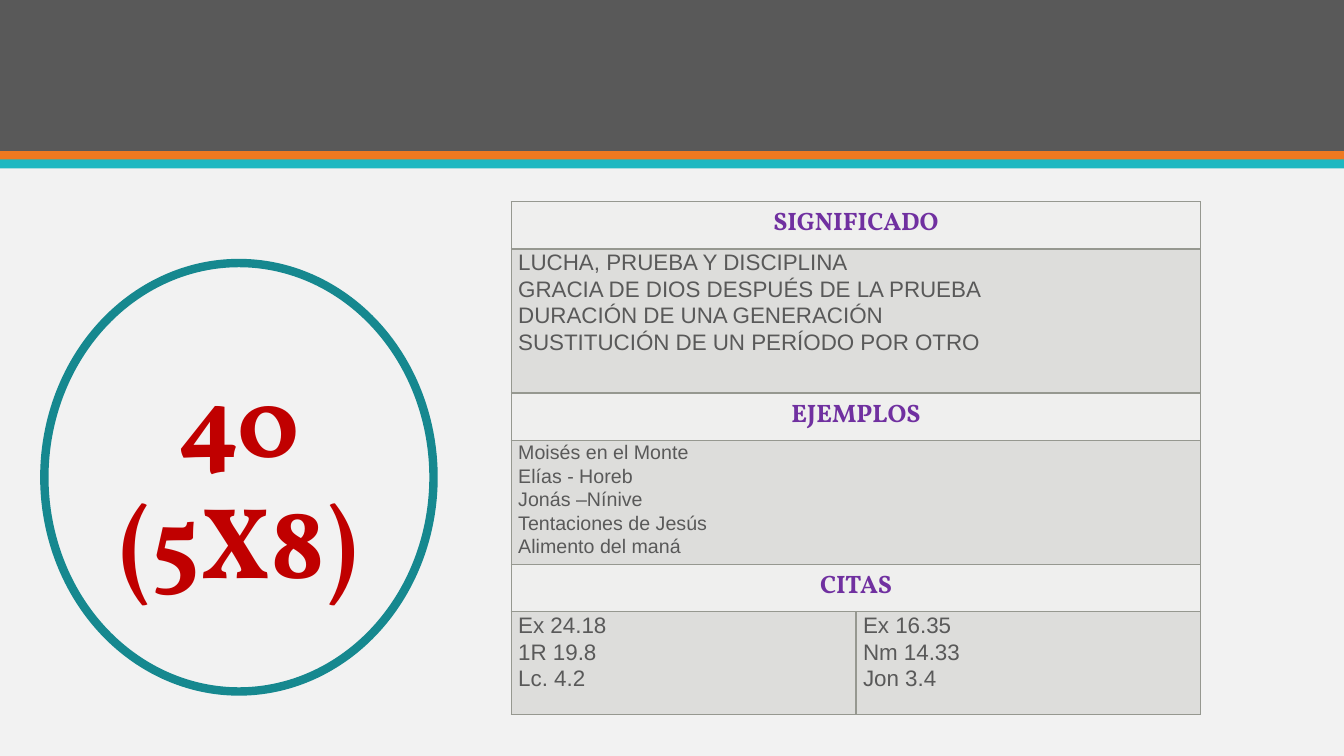
from lxml import etree
from pptx import Presentation
from pptx.dml.color import RGBColor
from pptx.enum.shapes import MSO_SHAPE as Preset
from pptx.enum.text import MSO_ANCHOR as Anchor, PP_ALIGN as Align
from pptx.oxml.ns import qn
from pptx.util import Inches, Pt

BACKGROUND = RGBColor(0xF2, 0xF2, 0xF2)
GRAY = RGBColor(0x59, 0x59, 0x59)
ORANGE = RGBColor(0xEF, 0x79, 0x20)
TURQUOISE = RGBColor(0x1E, 0xB8, 0xC1)
TEAL = RGBColor(0x16, 0x88, 0x8F)
RED = RGBColor(0xC0, 0x00, 0x00)
PURPLE = RGBColor(0x70, 0x30, 0xA0)
HEADING_FILL = RGBColor(0xEF, 0xEF, 0xEE)
BODY_FILL = RGBColor(0xDD, 0xDD, 0xDB)
BORDER = RGBColor(0x96, 0x98, 0x90)

SLIDE_WIDTH, SLIDE_HEIGHT = 13.33, 7.5
HEADING_HEIGHT = 0.47

SECTIONS = [
    ("SIGNIFICADO", 1.43, 16, [[
        "LUCHA, PRUEBA Y DISCIPLINA",
        "GRACIA DE DIOS DESPUÉS DE LA PRUEBA",
        "DURACIÓN DE UNA GENERACIÓN",
        "SUSTITUCIÓN DE UN PERÍODO POR OTRO",
    ]]),
    ("EJEMPLOS", 1.23, 14, [[
        "Moisés en el Monte",
        "Elías - Horeb",
        "Jonás –Nínive",
        "Tentaciones de Jesús",
        "Alimento del maná",
    ]]),
    ("CITAS", 1.02, 16, [
        ["Ex 24.18", "1R 19.8", "Lc. 4.2"],
        ["Ex 16.35", "Nm 14.33", "Jon 3.4"],
    ]),
]


def write_lines(text_frame, lines, font_name, size, color, bold, align):
    text_frame.text = "\n".join(lines)
    for paragraph in text_frame.paragraphs:
        paragraph.alignment = align
        for run in paragraph.runs:
            run.font.name = font_name
            run.font.size = Pt(size)
            run.font.bold = bold
            run.font.color.rgb = color


def add_header_bands(slide, left, top, width):
    for offset, height, color in [
        (0, 1.5, GRAY), (1.5, 0.09, ORANGE), (1.58, 0.09, TURQUOISE),
    ]:
        band = slide.shapes.add_shape(
            Preset.RECTANGLE, Inches(left), Inches(top + offset),
            Inches(width), Inches(height))
        band.shadow.inherit = False
        band.fill.solid()
        band.fill.fore_color.rgb = color
        band.line.fill.background()


def add_number_circle(slide, left, top, width, height):
    circle = slide.shapes.add_shape(
        Preset.OVAL, Inches(left), Inches(top), Inches(width), Inches(height))
    circle.shadow.inherit = False
    circle.fill.background()
    circle.line.color.rgb = TEAL
    circle.line.width = Pt(6)
    circle.text_frame.word_wrap = True
    circle.text_frame.vertical_anchor = Anchor.MIDDLE
    write_lines(circle.text_frame, ["40", "(5X8)"], "Vollkorn", 72, RED, True,
                Align.CENTER)


def style_cell(cell, fill_color):
    properties = cell._tc.get_or_add_tcPr()
    for side in ("a:lnL", "a:lnR", "a:lnT", "a:lnB"):
        line = etree.SubElement(properties, qn(side), w=str(Pt(1)))
        fill = etree.SubElement(line, qn("a:solidFill"))
        etree.SubElement(fill, qn("a:srgbClr"), val=str(BORDER))
    cell.fill.solid()
    cell.fill.fore_color.rgb = fill_color


def fill_body_cell(cell, lines, size):
    cell.margin_left = cell.margin_right = Inches(0.07)
    cell.margin_top = cell.margin_bottom = 0
    write_lines(cell.text_frame, lines, "Arial", size, GRAY, False,
                Align.JUSTIFY)
    for paragraph in cell.text_frame.paragraphs:
        paragraph.line_spacing = 1.07


def add_meaning_table(slide, left, top, width, height):
    table = slide.shapes.add_table(
        2 * len(SECTIONS), 2, Inches(left), Inches(top),
        Inches(width), Inches(height)).table
    for column in table.columns:
        column.width = Inches(width / 2)
    for index, (heading, body_height, size, blocks) in enumerate(SECTIONS):
        heading_row, body_row = 2 * index, 2 * index + 1
        table.rows[heading_row].height = Inches(HEADING_HEIGHT)
        table.rows[body_row].height = Inches(body_height)
        for column in range(2):
            style_cell(table.cell(heading_row, column), HEADING_FILL)
            style_cell(table.cell(body_row, column), BODY_FILL)
        heading_cell = table.cell(heading_row, 0)
        heading_cell.merge(table.cell(heading_row, 1))
        write_lines(heading_cell.text_frame, [heading], "Vollkorn", 18, PURPLE,
                    True, Align.CENTER)
        if len(blocks) == 1:
            table.cell(body_row, 0).merge(table.cell(body_row, 1))
        for column, lines in enumerate(blocks):
            fill_body_cell(table.cell(body_row, column), lines, size)


def main():
    presentation = Presentation()
    presentation.slide_width = Inches(SLIDE_WIDTH)
    presentation.slide_height = Inches(SLIDE_HEIGHT)
    slide = presentation.slides.add_slide(presentation.slide_layouts[6])
    slide.background.fill.solid()
    slide.background.fill.fore_color.rgb = BACKGROUND
    add_header_bands(slide, 0, 0, SLIDE_WIDTH)
    add_number_circle(slide, 0.44, 2.61, 3.86, 4.25)
    add_meaning_table(slide, 5.07, 2, 6.84, 5.1)
    presentation.save("out.pptx")


if __name__ == "__main__":
    main()
